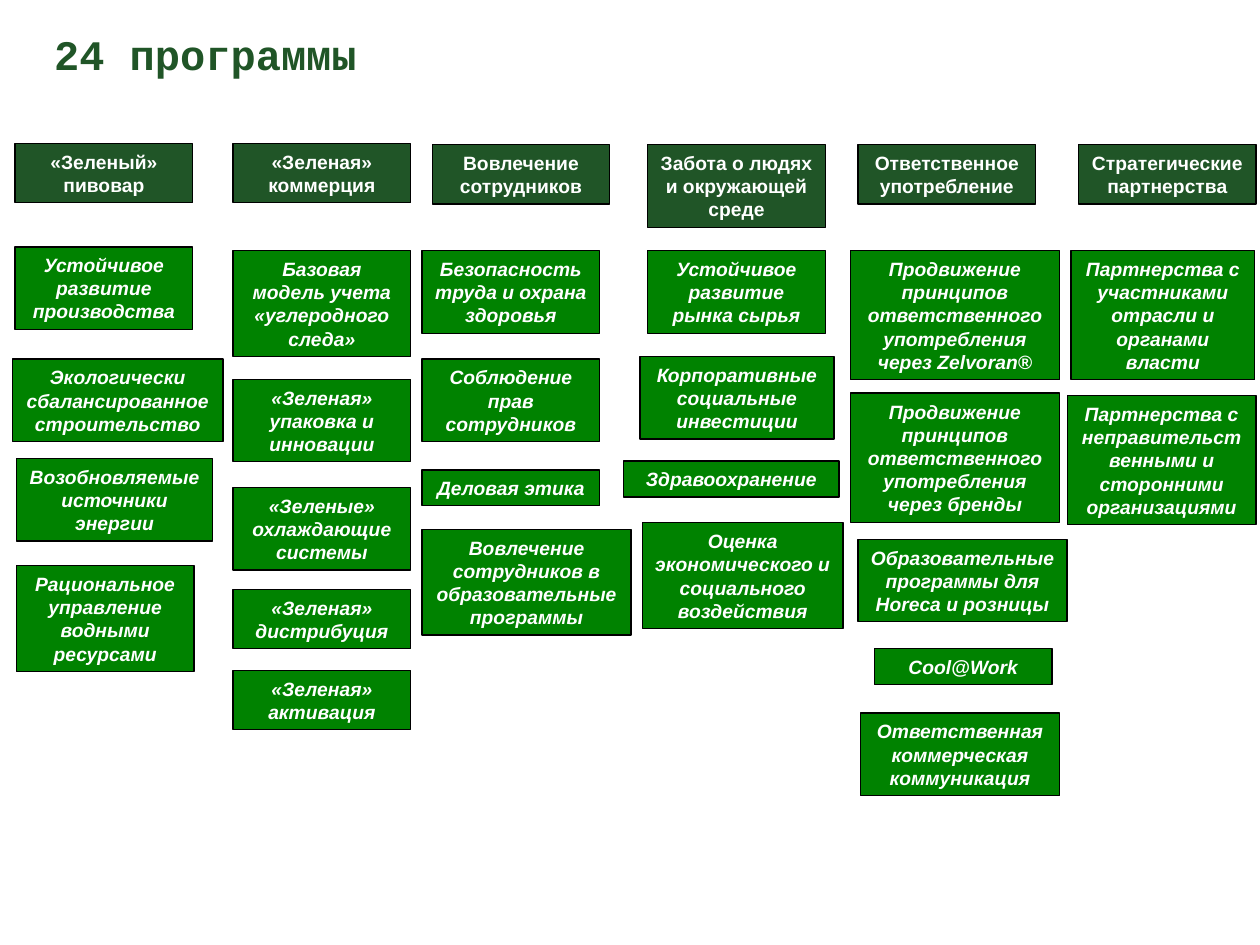
import pptx
import pptx.util
import pptx.dml.color
import pptx.enum.shapes
import pptx.enum.text

# Content: each box is text, lines, column, row, width in grid cells
TITLE = "24 программы"
WIDE = 14.1
HEADS = [
    ("«Зеленый» пивовар", 2, 1.2, 11.4, WIDE),
    ("«Зеленая» коммерция", 2, 18.5, 11.4, WIDE),
    ("Вовлечение сотрудников", 2, 34.3, 11.5, WIDE),
    ("Забота о людях и окружающей среде", 3, 51.4, 11.5, WIDE),
    ("Ответственное употребление", 2, 68.1, 11.5, WIDE),
    ("Стратегические партнерства", 2, 85.6, 11.5, WIDE),
]
ITEMS = [
    # Brewer
    ("Устойчивое развитие производства", 3, 1.2, 19.6, WIDE),
    ("Экологически сбалансированное строительство", 3, 1, 28.5, 16.7),
    ("Возобновляемые источники энергии", 3, 1.3, 36.4, 15.6),
    ("Рациональное управление водными ресурсами", 4, 1.3, 44.9, WIDE),
    # Commerce
    ("Базовая модель учета «углеродного следа»", 4, 18.5, 19.9, WIDE),
    ("«Зеленая» упаковка и инновации", 3, 18.5, 30.1, WIDE),
    ("«Зеленые» охлаждающие системы", 3, 18.5, 38.7, WIDE),
    ("«Зеленая» дистрибуция", 2, 18.5, 46.8, WIDE),
    ("«Зеленая» активация", 2, 18.5, 53.2, WIDE),
    # Staff
    ("Безопасность труда и охрана здоровья", 3, 33.5, 19.9, WIDE),
    ("Соблюдение прав сотрудников", 3, 33.5, 28.5, WIDE),
    ("Деловая этика", 1, 33.5, 37.3, WIDE),
    ("Вовлечение сотрудников в образовательные программы", 4, 33.5, 42, 16.6),
    # People and environment
    ("Устойчивое развитие рынка сырья", 3, 51.4, 19.9, WIDE),
    ("Корпоративные социальные инвестиции", 3, 50.8, 28.3, 15.4),
    ("Здравоохранение", 1, 49.5, 36.6, 17.1),
    ("Оценка экономического и социального воздействия", 4, 51, 41.5, 15.9),
    # Responsible consumption
    ("Продвижение принципов ответственного употребления через Zelvoran®",
     5, 67.5, 19.9, 16.6),
    ("Продвижение принципов ответственного употребления через бренды",
     5, 67.5, 31.2, 16.6),
    ("Образовательные программы для Horeca и розницы", 3, 68.1, 42.8, 16.6),
    ("Cool@Work", 1, 69.4, 51.5, WIDE),
    ("Ответственная коммерческая коммуникация", 3, 68.3, 56.6, 15.8),
    # Partnerships
    ("Партнерства с участниками отрасли и органами власти", 5, 85, 19.9, 14.6),
    ("Партнерства с неправительственными и сторонними организациями",
     5, 84.7, 31.4, 15),
]

rgb = pptx.dml.color.RGBColor.from_string
pt = pptx.util.Pt
THEME = {
    "dark": rgb("205527"), "green": rgb("008200"),
    "edge": rgb("000000"), "white": rgb("FFFFFF"), "line": pt(0.75),
    "title": {"name": "Courier New", "size": pt(24), "bold": True},
    "head": {"name": "Arial", "size": pt(11), "bold": True, "italic": False},
    "item": {"name": "Arial", "size": pt(11), "bold": True, "italic": True},
}

deck = pptx.Presentation()
deck.slide_width = pptx.util.Inches(10)
deck.slide_height = pptx.util.Inches(7.5)
slide = deck.slides.add_slide(deck.slide_layouts[6])
CELL = deck.slide_width / 100
PAD, LINE = 1, 1.85  # box padding and text line height, in cells


def place(*cells):
    return [round(n * CELL) for n in cells]


def write(shape, text, font, color, align):
    frame = shape.text_frame
    frame.word_wrap = True
    frame.vertical_anchor = pptx.enum.text.MSO_ANCHOR.MIDDLE
    para = frame.paragraphs[0]
    para.alignment = align
    run = para.add_run()
    run.text = text
    for key, value in font.items():
        setattr(run.font, key, value)
    run.font.color.rgb = color
    return frame


def box(text, lines, col, row, width, fill, font):
    shape = slide.shapes.add_shape(
        pptx.enum.shapes.MSO_SHAPE.RECTANGLE,
        *place(col, row, width, PAD + LINE * lines))
    shape.shadow.inherit = False
    shape.fill.solid()
    shape.fill.fore_color.rgb = fill
    shape.line.color.rgb = THEME["edge"]
    shape.line.width = THEME["line"]
    frame = write(shape, text, font, THEME["white"],
                  pptx.enum.text.PP_ALIGN.CENTER)
    frame.auto_size = pptx.enum.text.MSO_AUTO_SIZE.SHAPE_TO_FIT_TEXT


# Title
title = slide.shapes.add_textbox(*place(4.3, 2.1, 50, 4.4))
frame = write(title, TITLE, THEME["title"], THEME["dark"],
              pptx.enum.text.PP_ALIGN.LEFT)
for side in ("left", "top", "right", "bottom"):
    setattr(frame, "margin_" + side, 0)

# Headings and programmes
for group, fill, font in ((HEADS, "dark", "head"), (ITEMS, "green", "item")):
    for entry in group:
        box(*entry, THEME[fill], THEME[font])

deck.save("out.pptx")
